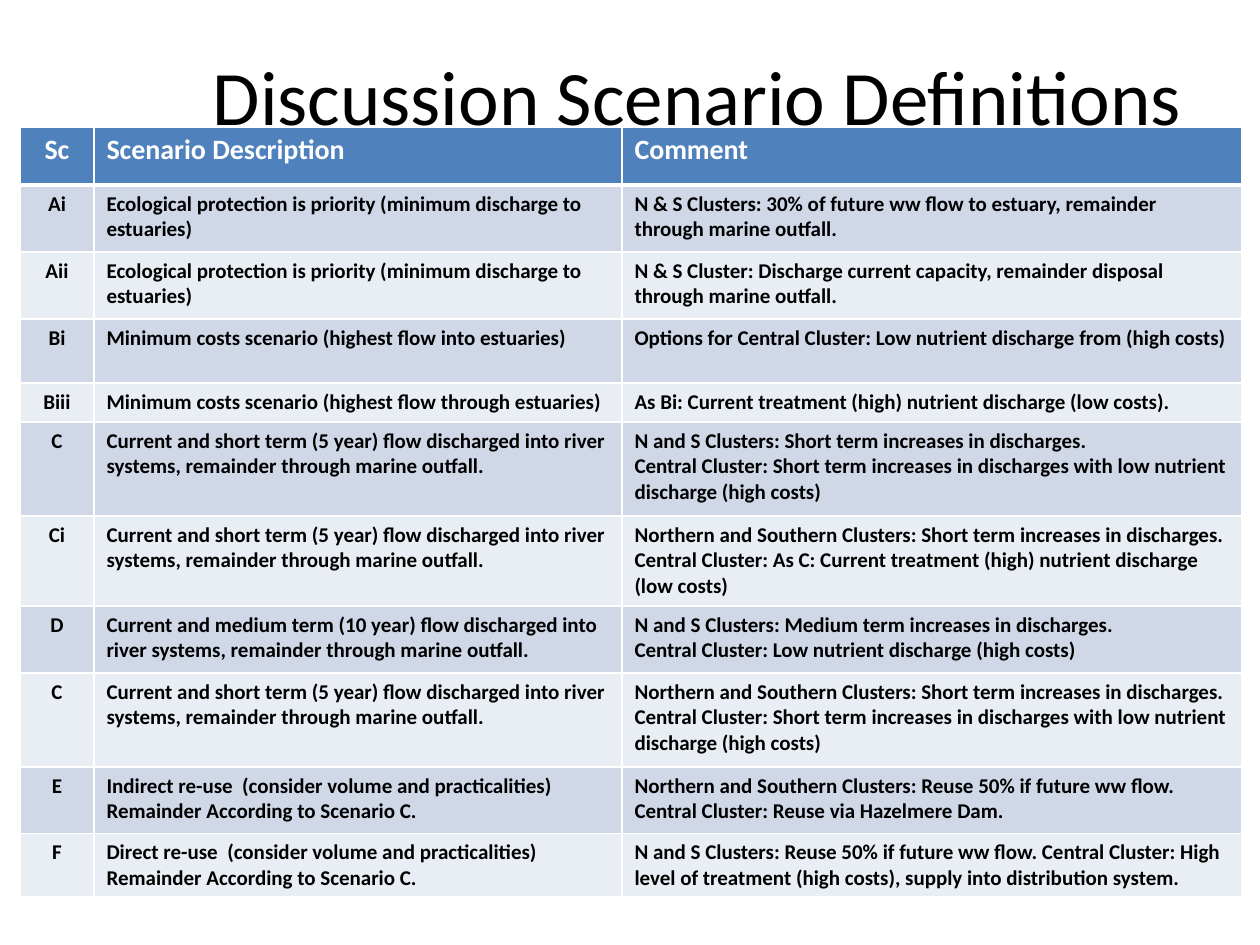
from lxml import etree
from pptx import Presentation
from pptx.dml.color import RGBColor
from pptx.enum.text import MSO_ANCHOR, PP_ALIGN
from pptx.oxml.ns import qn
from pptx.util import Emu, Pt

CENTER, LEFT = PP_ALIGN.CENTER, PP_ALIGN.LEFT
TOP = MSO_ANCHOR.TOP
FONT = "Calibri"
BLACK = RGBColor(0x00, 0x00, 0x00)
WHITE = RGBColor(0xFF, 0xFF, 0xFF)
HEADER_BLUE = RGBColor(0x4F, 0x81, 0xBD)
BANDS = (RGBColor(0xD0, 0xD8, 0xE8), RGBColor(0xE9, 0xED, 0xF4))

COLUMN_WIDTHS = (74, 528, 620)
ROW_HEIGHTS = (58, 67, 67, 64, 39, 94, 90, 67, 94, 67, 63)

# Wording shared by several scenarios
ECOLOGICAL = "Ecological protection is priority (minimum discharge to estuaries)"
SHORT_TERM = ("Current and short term (5 year) flow discharged into river systems, "
              "remainder through marine outfall.")
REMAINDER = "Remainder According to Scenario C."
SHORT_INCREASES = "Clusters: Short term increases in discharges."
CENTRAL_LOW = ("Central Cluster: Short term increases in discharges with low nutrient "
               "discharge (high costs)")

HEADINGS = ("Sc", "Scenario Description", "Comment")
SCENARIOS = (
    ("Ai", ECOLOGICAL,
     "N & S Clusters: 30% of future ww flow to estuary, remainder through marine outfall."),
    ("Aii", ECOLOGICAL,
     "N & S Cluster: Discharge current capacity, remainder disposal through marine outfall."),
    ("Bi", "Minimum costs scenario (highest flow into estuaries)",
     "Options for Central Cluster: Low nutrient discharge from (high costs)"),
    ("Biii", "Minimum costs scenario (highest flow through estuaries)",
     "As Bi: Current treatment (high) nutrient discharge (low costs)."),
    ("C", SHORT_TERM, f"N and S {SHORT_INCREASES}\n{CENTRAL_LOW}"),
    ("Ci", SHORT_TERM,
     f"Northern and Southern {SHORT_INCREASES}\n"
     "Central Cluster: As C: Current treatment (high) nutrient discharge (low costs)"),
    ("D", "Current and medium term (10 year) flow discharged into river systems, "
          "remainder through marine outfall.",
     "N and S Clusters: Medium term increases in discharges.\n"
     "Central Cluster: Low nutrient discharge (high costs)"),
    ("C", SHORT_TERM, f"Northern and Southern {SHORT_INCREASES}\n{CENTRAL_LOW}"),
    ("E", f"Indirect re-use  (consider volume and practicalities)\n{REMAINDER}",
     "Northern and Southern Clusters: Reuse 50% if future ww flow.\n"
     "Central Cluster: Reuse via Hazelmere Dam."),
    ("F", f"Direct re-use  (consider volume and practicalities)\n{REMAINDER}",
     "N and S Clusters: Reuse 50% if future ww flow. Central Cluster: High level of "
     "treatment (high costs), supply into distribution system."),
)


def px(length):
    return Emu(round(length * 914400 / 126))


def write(frame, text, size, color, align, bold=False):
    frame.text = text
    for paragraph in frame.paragraphs:
        paragraph.alignment = align
        font = paragraph.font
        font.name, font.size, font.bold = FONT, Pt(size), bold
        font.color.rgb = color


def add_title(slide, text):
    frame = slide.shapes.add_textbox(px(198), px(38), px(999), px(157)).text_frame
    frame.word_wrap = True
    frame.vertical_anchor = TOP
    frame.margin_top = px(10)
    write(frame, text, 44, BLACK, CENTER)


def set_borders(cell, top, bottom):
    properties = cell._tc.get_or_add_tcPr()
    for side, points in (("L", 1), ("R", 1), ("T", top), ("B", bottom)):
        line = etree.SubElement(properties, qn(f"a:ln{side}"), w=str(Pt(points)))
        fill = etree.SubElement(line, qn("a:solidFill"))
        etree.SubElement(fill, qn("a:srgbClr"), val=str(WHITE))


def add_scenario_table(slide):
    rows = (HEADINGS,) + SCENARIOS
    table = slide.shapes.add_table(
        len(rows), len(HEADINGS), px(20), px(127),
        px(sum(COLUMN_WIDTHS)), px(sum(ROW_HEIGHTS))).table
    for column, width in zip(table.columns, COLUMN_WIDTHS):
        column.width = px(width)
    for row, height in zip(table.rows, ROW_HEIGHTS):
        row.height = px(height)

    for r, texts in enumerate(rows):
        header = r == 0
        for c, text in enumerate(texts):
            cell = table.cell(r, c)
            set_borders(cell, top=3 if r == 1 else 1, bottom=3 if header else 1)
            cell.fill.solid()
            cell.fill.fore_color.rgb = HEADER_BLUE if header else BANDS[(r - 1) % 2]
            write(cell.text_frame, text, 16 if header else 12,
                  WHITE if header else BLACK, CENTER if c == 0 else LEFT, bold=True)


def main():
    presentation = Presentation()
    presentation.slide_width, presentation.slide_height = px(1260), px(945)
    slide = presentation.slides.add_slide(presentation.slide_layouts[6])
    add_title(slide, "Discussion Scenario Definitions")
    add_scenario_table(slide)
    presentation.save("out.pptx")


if __name__ == "__main__":
    main()
